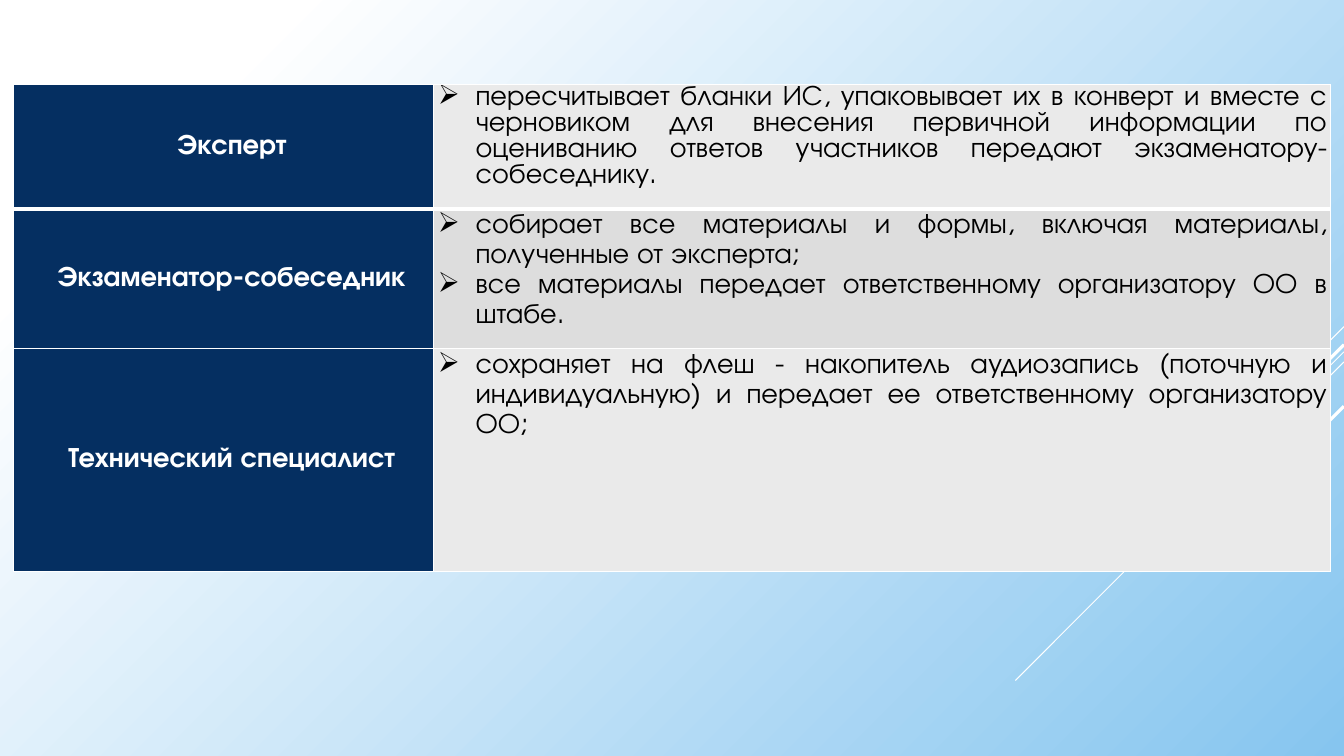
from lxml import etree
from pptx import Presentation
from pptx.dml.color import RGBColor
from pptx.enum import shapes, text
from pptx.oxml import ns
from pptx.util import Pt

FONT = "TeX Gyre Adventor"
WHITE, NAVY, BLACK = "FFFFFF", "052F61", "000000"


def colour(hex_code):
    return RGBColor.from_string(hex_code)


def fill_cell(cell, lines, fill, borders, cell_format, paragraph_format, font_format, indent, bullet=None):
    """Write one paragraph per line; borders holds widths in points by side (L, R, T, B)."""
    cell.fill.solid()
    cell.fill.fore_color.rgb = colour(fill)
    cell_format = {"margin_left": Pt(2.9), "margin_right": Pt(2.9),
                   "margin_top": 0, "margin_bottom": 0, **cell_format}
    for name, value in cell_format.items():
        setattr(cell, name, value)
    properties = cell._tc.get_or_add_tcPr()
    for position, (side, width) in enumerate(borders.items()):
        border = etree.Element(ns.qn(f"a:ln{side}"), w=str(Pt(width)))
        solid = etree.SubElement(border, ns.qn("a:solidFill"))
        etree.SubElement(solid, ns.qn("a:srgbClr"), val=WHITE)
        properties.insert(position, border)

    cell.text_frame.text = "\n".join(lines)
    for paragraph in cell.text_frame.paragraphs:
        for name, value in paragraph_format.items():
            setattr(paragraph, name, value)
        font = paragraph.runs[0].font
        for name, value in {"name": FONT, "size": Pt(20), **font_format}.items():
            setattr(font, name, value)
        paragraph_properties = paragraph._p.get_or_add_pPr()
        paragraph_properties.set("marL", str(Pt(indent)))
        paragraph_properties.set("indent", str(Pt(-indent if bullet else 0)))
        if bullet:
            etree.SubElement(paragraph_properties, ns.qn("a:buChar"), char=bullet)


presentation = Presentation()
presentation.slide_width, presentation.slide_height = Pt(960), Pt(540)
slide = presentation.slides.add_slide(presentation.slide_layouts[6])

background = slide.background.fill
background.gradient()
background.gradient_angle = 315
for stop, position, shade in zip(background.gradient_stops, (0.14, 1), (WHITE, "86C5EF")):
    stop.position = position
    stop.color.rgb = colour(shade)

# Diagonal lines run down and left at 45° from the right edge: start height, length, weight
for top, reach, weight in [(233.3, 72, 0.75), (251.3, 234.7, 0.75), (258.5, 149, 0.75),
                           (246.2, 137.5, 2.25), (290.2, 100.1, 2.25)]:
    diagonal = slide.shapes.add_connector(
        shapes.MSO_CONNECTOR.STRAIGHT, Pt(960), Pt(top), Pt(960 - reach), Pt(top + reach))
    diagonal.line.color.rgb = colour(WHITE)
    diagonal.line.width = Pt(weight)
    etree.SubElement(diagonal._element.spPr, ns.qn("a:effectLst"))

# Role, duties, row height, duties fill, line spacing, top and bottom border
roles = [
    ("Эксперт",
     ["пересчитывает бланки ИС, упаковывает их в конверт и вместе с черновиком для внесения "
      "первичной информации по оцениванию ответов участников передают экзаменатору-собеседнику."],
     88.6, "EAEAEA", None, 1, 3),
    ("Экзаменатор-собеседник",
     ["собирает все материалы и формы, включая материалы, полученные от эксперта;",
      "все материалы передает ответственному организатору ОО в штабе."],
     100.1, "DDDDDD", 1.15, 3, 1),
    ("Технический специалист",
     ["сохраняет на флеш - накопитель аудиозапись (поточную и индивидуальную) и передает ее "
      "ответственному организатору ОО;"],
     159.1, "EAEAEA", 1.15, 1, 1),
]
column_widths = [300.2, 640.8]
table = slide.shapes.add_table(
    len(roles), 2, Pt(9.6), Pt(60.5), Pt(sum(column_widths)), Pt(sum(role[2] for role in roles))).table
table.first_row = table.horz_banding = False
for column, width in zip(table.columns, column_widths):
    column.width = Pt(width)

for row, (role, duties, height, duties_fill, spacing, top, bottom) in zip(table.rows, roles):
    row.height = Pt(height)
    borders = {"L": 1, "R": 1, "T": top, "B": bottom}
    fill_cell(row.cells[0], [role], NAVY, borders,
              {"vertical_anchor": text.MSO_ANCHOR.MIDDLE},
              {"alignment": text.PP_ALIGN.CENTER},
              {"bold": True}, indent=12)
    row.cells[0].text_frame.paragraphs[0].runs[0].font.color.rgb = colour(WHITE)
    fill_cell(row.cells[1], duties, duties_fill, borders,
              {"vertical_anchor": text.MSO_ANCHOR.TOP},
              {"alignment": text.PP_ALIGN.JUSTIFY, "line_spacing": spacing},
              {"bold": False}, indent=27, bullet="➢")
    for paragraph in row.cells[1].text_frame.paragraphs:
        paragraph.runs[0].font.color.rgb = colour(BLACK)

presentation.save("out.pptx")
